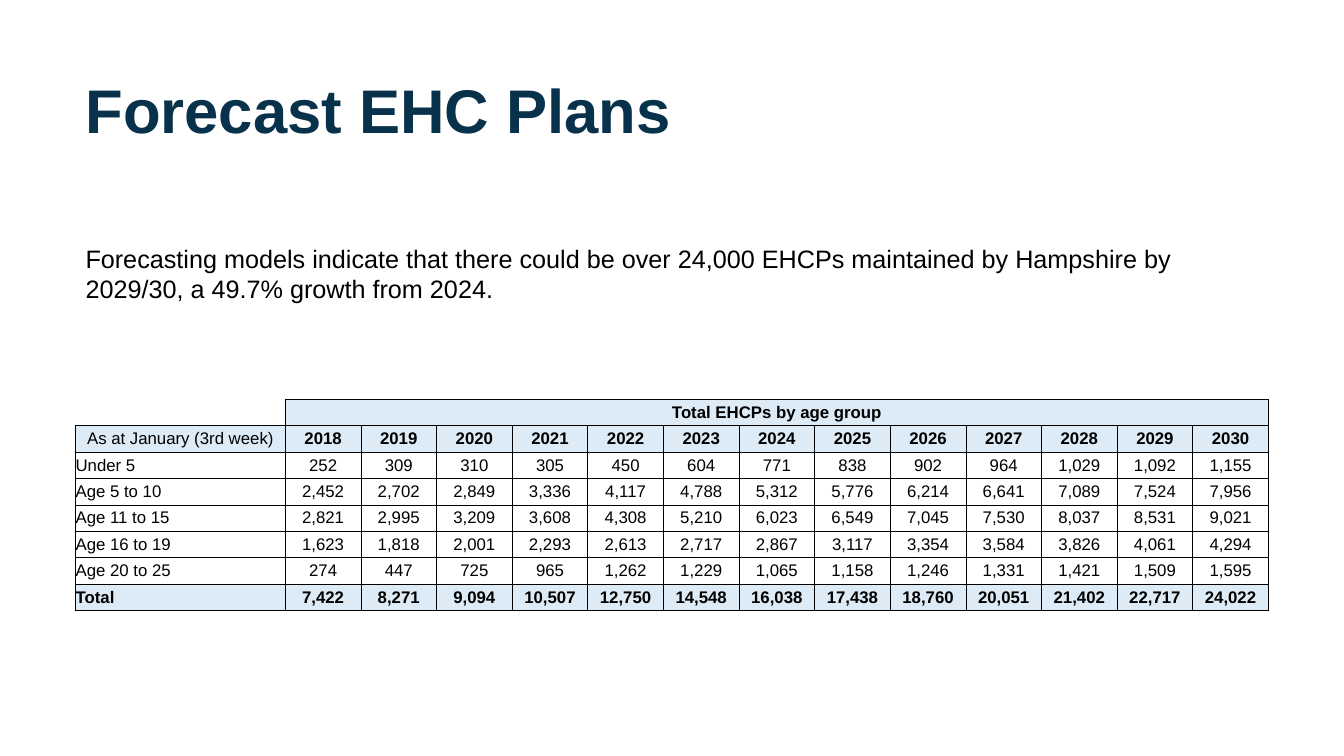
"""Build the slide that forecasts EHC plans by age group."""
from dataclasses import dataclass

import lxml.etree
import pptx
import pptx.dml.color
import pptx.enum.text
import pptx.oxml.ns
import pptx.slide
import pptx.table
import pptx.text.text
import pptx.util

Inches = pptx.util.Inches
Pt = pptx.util.Pt
RGBColor = pptx.dml.color.RGBColor
ALIGN = pptx.enum.text.PP_ALIGN
ANCHOR = pptx.enum.text.MSO_ANCHOR
qn = pptx.oxml.ns.qn

NAVY = RGBColor(0x08, 0x31, 0x4C)
BLACK = RGBColor(0, 0, 0)
PALE_BLUE = RGBColor(0xDD, 0xEB, 0xF7)
FONT = "Arial"
CELL_SIZE = 12
LEFT = 0.75
TABLE_TOP, TABLE_WIDTH, TABLE_HEIGHT = 3.96, 11.83, 2.1
LABEL_WIDTH = 2.08
YEARS = range(2018, 2031)


@dataclass(frozen=True)
class Caption:
    text: str
    top: float
    width: float
    height: float
    size: int
    color: RGBColor
    bold: bool
    anchor: ANCHOR
    line_spacing: float


@dataclass(frozen=True)
class AgeGroup:
    label: str
    plans: tuple[int, ...]
    is_total: bool = False


CAPTIONS = (
    Caption("Forecast EHC Plans", 0.4, 11.67, 1.45, 44, NAVY, True, ANCHOR.MIDDLE, 0.9),
    Caption(
        "Forecasting models indicate that there could be over 24,000 EHCPs maintained "
        "by Hampshire by 2029/30, a 49.7% growth from 2024.",
        2.36, 11.83, 0.71, 18, BLACK, False, ANCHOR.TOP, 1.0,
    ),
)

AGE_GROUPS = (
    AgeGroup("Under 5", (252, 309, 310, 305, 450, 604, 771, 838, 902, 964, 1029, 1092, 1155)),
    AgeGroup("Age 5 to 10", (2452, 2702, 2849, 3336, 4117, 4788, 5312, 5776, 6214, 6641,
                             7089, 7524, 7956)),
    AgeGroup("Age 11 to 15", (2821, 2995, 3209, 3608, 4308, 5210, 6023, 6549, 7045, 7530,
                              8037, 8531, 9021)),
    AgeGroup("Age 16 to 19", (1623, 1818, 2001, 2293, 2613, 2717, 2867, 3117, 3354, 3584,
                              3826, 4061, 4294)),
    AgeGroup("Age 20 to 25", (274, 447, 725, 965, 1262, 1229, 1065, 1158, 1246, 1331,
                              1421, 1509, 1595)),
    AgeGroup("Total", (7422, 8271, 9094, 10507, 12750, 14548, 16038, 17438, 18760, 20051,
                       21402, 22717, 24022), True),
)


def add_run(paragraph: pptx.text.text._Paragraph, text: str, size: int,
            color: RGBColor, bold: bool) -> None:
    run = paragraph.add_run()
    run.text = text
    run.font.name = FONT
    run.font.size = Pt(size)
    run.font.bold = bold
    run.font.color.rgb = color


def add_caption(slide: pptx.slide.Slide, caption: Caption) -> None:
    box = slide.shapes.add_textbox(
        Inches(LEFT), Inches(caption.top), Inches(caption.width), Inches(caption.height))
    frame = box.text_frame
    frame.word_wrap = True
    frame.vertical_anchor = caption.anchor
    paragraph = frame.paragraphs[0]
    paragraph.line_spacing = caption.line_spacing
    add_run(paragraph, caption.text, caption.size, caption.color, caption.bold)


def set_borders(cell: pptx.table._Cell, visible_sides: str) -> None:
    properties = cell._tc.get_or_add_tcPr()
    for side in "LRTB":
        line = lxml.etree.SubElement(properties, qn(f"a:ln{side}"), w=str(Pt(0.5)))
        if side in visible_sides:
            fill = lxml.etree.SubElement(line, qn("a:solidFill"))
            lxml.etree.SubElement(fill, qn("a:srgbClr"), val=str(BLACK))
        else:
            lxml.etree.SubElement(line, qn("a:noFill"))


def style_cell(cell: pptx.table._Cell, shaded: bool, visible_sides: str = "LRTB") -> None:
    cell.margin_left = cell.margin_right = cell.margin_top = cell.margin_bottom = 0
    cell.vertical_anchor = ANCHOR.MIDDLE
    set_borders(cell, visible_sides)
    if shaded:
        cell.fill.solid()
        cell.fill.fore_color.rgb = PALE_BLUE
    else:
        cell.fill.background()


def write_cell(cell: pptx.table._Cell, text: str, bold: bool, align: ALIGN) -> None:
    paragraph = cell.text_frame.paragraphs[0]
    paragraph.alignment = align
    add_run(paragraph, text, CELL_SIZE, BLACK, bold)


def add_forecast_table(slide: pptx.slide.Slide) -> None:
    row_count, column_count = len(AGE_GROUPS) + 2, len(YEARS) + 1
    forecast = slide.shapes.add_table(
        row_count, column_count, Inches(LEFT), Inches(TABLE_TOP),
        Inches(TABLE_WIDTH), Inches(TABLE_HEIGHT)).table
    forecast.first_row = False
    forecast.horz_banding = False
    for row in forecast.rows:
        row.height = Inches(TABLE_HEIGHT / row_count)
    for index, column in enumerate(forecast.columns):
        column.width = Inches((TABLE_WIDTH - LABEL_WIDTH) / len(YEARS) if index else LABEL_WIDTH)

    corner = forecast.cell(0, 0)
    style_cell(corner, False, "RB")
    lxml.etree.SubElement(
        corner.text_frame.paragraphs[0]._p, qn("a:endParaRPr"), sz=str(CELL_SIZE * 100))
    for column in range(1, column_count):
        style_cell(forecast.cell(0, column), True)
    heading = forecast.cell(0, 1)
    heading.merge(forecast.cell(0, column_count - 1))
    write_cell(heading, "Total EHCPs by age group", True, ALIGN.CENTER)

    for column, text in enumerate(("As at January (3rd week)", *map(str, YEARS))):
        cell = forecast.cell(1, column)
        style_cell(cell, True)
        write_cell(cell, text, column > 0, ALIGN.CENTER)

    for row, group in enumerate(AGE_GROUPS, start=2):
        for column, text in enumerate((group.label, *(f"{count:,}" for count in group.plans))):
            cell = forecast.cell(row, column)
            style_cell(cell, group.is_total)
            write_cell(cell, text, group.is_total, ALIGN.CENTER if column else ALIGN.LEFT)


def main() -> None:
    presentation = pptx.Presentation()
    presentation.slide_width = Inches(13.33)
    presentation.slide_height = Inches(7.5)
    slide = presentation.slides.add_slide(presentation.slide_layouts[6])
    for caption in CAPTIONS:
        add_caption(slide, caption)
    add_forecast_table(slide)
    presentation.save("out.pptx")


if __name__ == "__main__":
    main()
